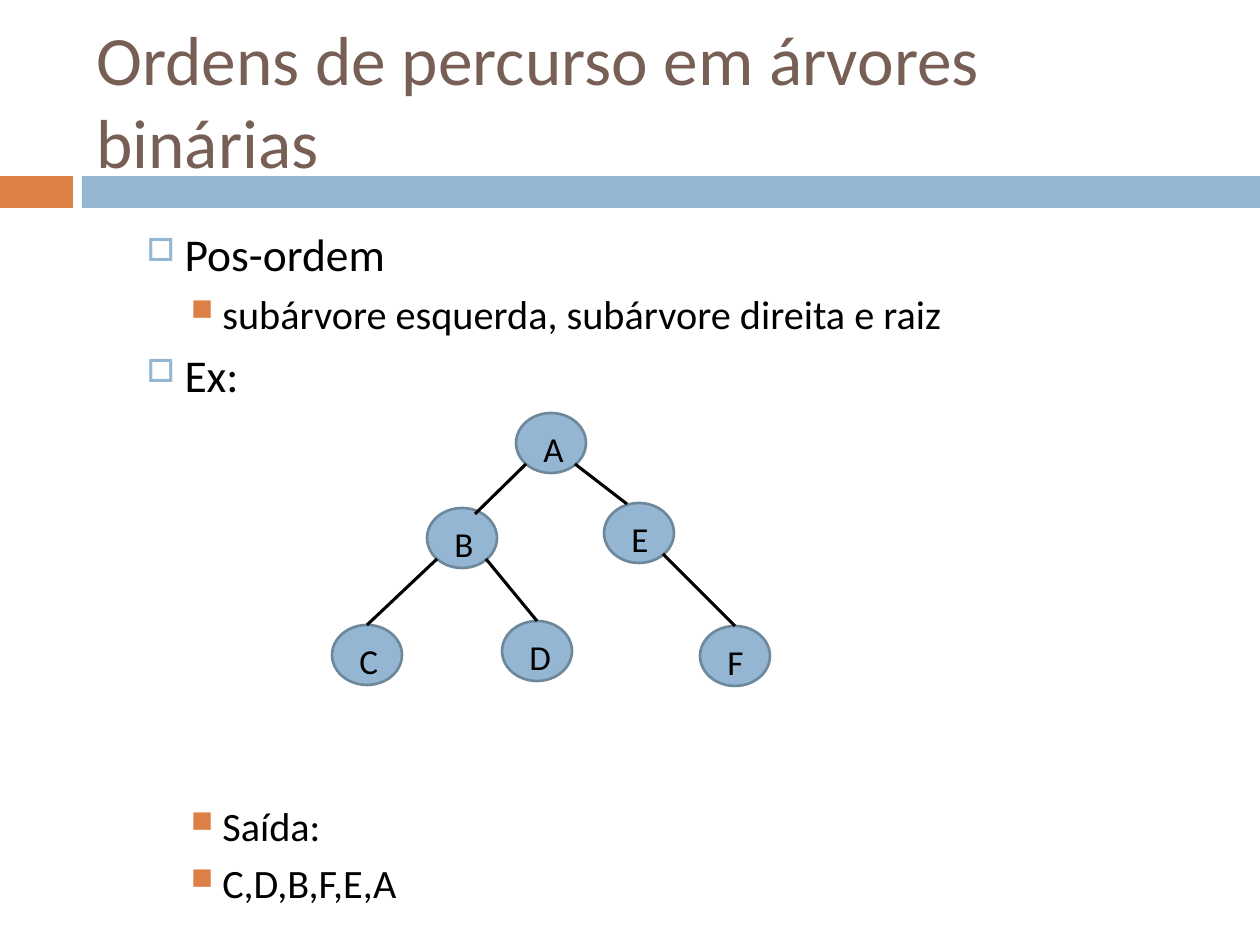
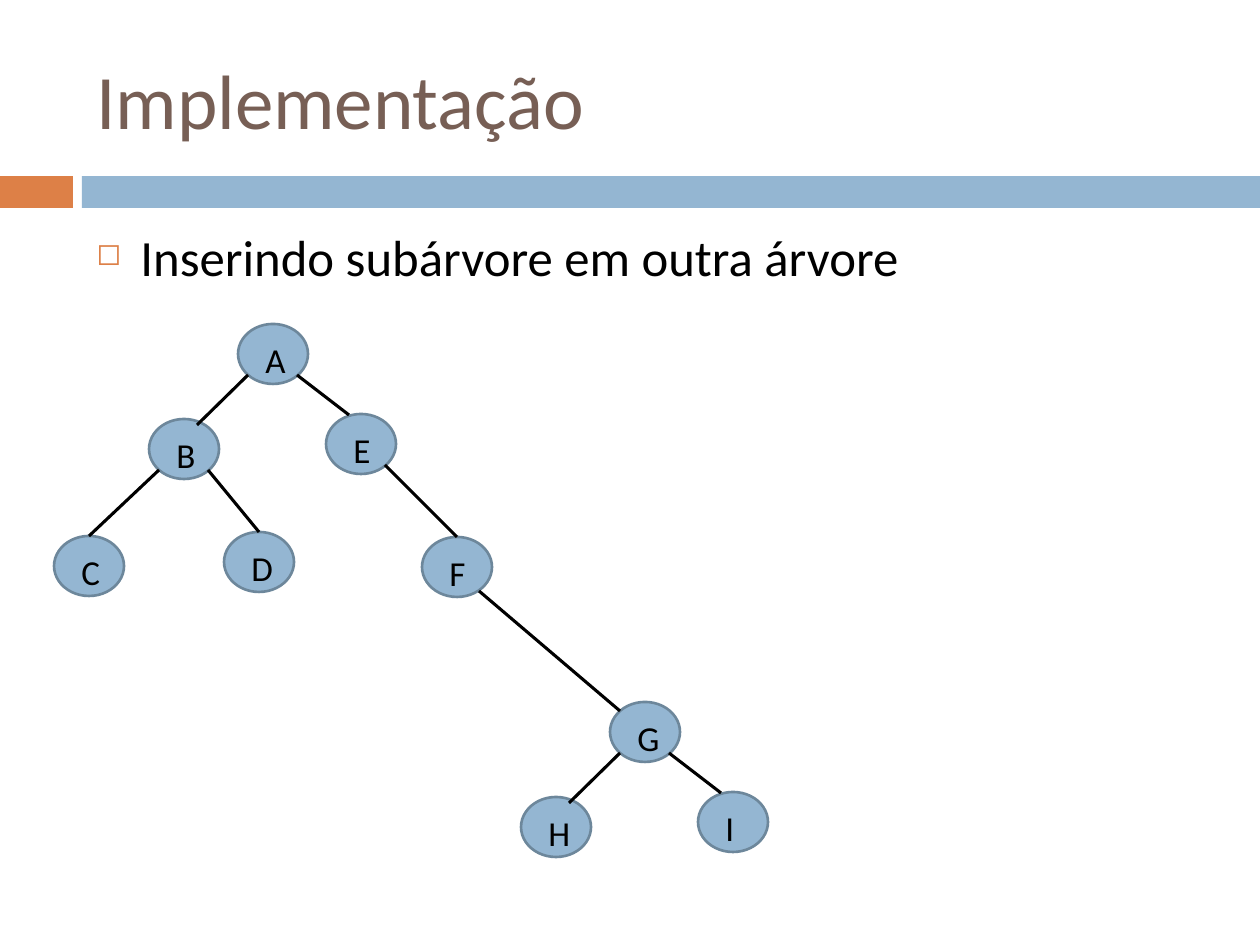
from dataclasses import dataclass
from typing import NamedTuple

from lxml.etree import SubElement
from pptx import Presentation
from pptx.dml.color import RGBColor
from pptx.enum.shapes import MSO_CONNECTOR as Connector, MSO_SHAPE as Shape
from pptx.enum.text import MSO_ANCHOR as Anchor
from pptx.oxml.ns import qn
from pptx.util import Inches, Pt

PIXELS_PER_INCH = 126


def px(length: int) -> int:
    return round(Inches(1) * length / PIXELS_PER_INCH)


@dataclass(frozen=True)
class Theme:
    font: str = "Calibri"
    blue: str = "94B6D2"
    blue_outline: str = "6D879B"
    orange: str = "DD8047"
    title: str = "775F55"
    text: str = "000000"
    long_title_size: float = 39.6
    title_size: float = 44
    lead_size: float = 29
    topic_size: float = 26
    detail_size: float = 23
    node_size: float = 20
    node_line: float = 1.5
    branch_line: float = 1.75


class Point(NamedTuple):
    x: int
    y: int

    def plus(self, other: "Point") -> "Point":
        return Point(self.x + other.x, self.y + other.y)


class Box(NamedTuple):
    left: int
    top: int
    width: int
    height: int

    def to_emu(self) -> list[int]:
        return [px(length) for length in self]


@dataclass(frozen=True)
class BulletStyle:
    symbol: str
    color: str
    percent: int
    margin: float
    hanging: float
    size: float
    space_before: float
    level: int = 0


class Item(NamedTuple):
    text: str
    style: BulletStyle
    extra_space: float = 0


class Branch(NamedTuple):
    parent: str
    child: str
    leave: Point
    arrive: Point


@dataclass(frozen=True)
class Tree:
    nodes: dict[str, Point]
    branches: list[Branch]


THEME = Theme()
LEAD = BulletStyle("◻", THEME.orange, 60, 0.35, 0.35, THEME.lead_size, 7)
TOPIC = BulletStyle("□", THEME.blue, 70, 0.7, 0.3, THEME.topic_size, 5.5, 1)
DETAIL = BulletStyle("■", THEME.orange, 75, 1, 0.25, THEME.detail_size, 5, 2)
TREE_GAP = 223.3

BANDS = [(Box(0, 176, 73, 32), THEME.orange), (Box(82, 176, 1178, 32), THEME.blue)]
TITLE_BOX = Box(84, 31, 1124, 136)

NODE_WIDTH, NODE_HEIGHT = 70, 60
LABEL_OFFSET = Point(15, 8)
LABEL_WIDTH, LABEL_HEIGHT = 44, 55

TOP = Point(35, 0)
TOP_LEFT = Point(10, 9)
LOWER_LEFT = Point(10, 51)
LOWER_RIGHT = Point(59, 51)
LEFT_CHILD_ENTRY = Point(48, 6)
RIGHT_CHILD_ENTRY = Point(23, 1)
LINK_EXIT = Point(57, 54)


def small_tree(root: str, left: str, right: str) -> Tree:
    return Tree(
        {root: Point(0, 0), left: Point(-89, 95), right: Point(88, 90)},
        [
            Branch(root, left, LOWER_LEFT, LEFT_CHILD_ENTRY),
            Branch(root, right, LOWER_RIGHT, RIGHT_CHILD_ENTRY),
        ],
    )


UPPER_TREE = small_tree("A", "B", "E")
MAIN_TREE = Tree(
    UPPER_TREE.nodes | {"C": Point(-184, 212), "D": Point(-14, 208), "F": Point(184, 213)},
    UPPER_TREE.branches
    + [
        Branch("B", "C", LOWER_LEFT, TOP),
        Branch("B", "D", LOWER_RIGHT, TOP),
        Branch("E", "F", LOWER_RIGHT, TOP),
    ],
)
INSERTED_TREE = small_tree("G", "H", "I")


def rgb(color: str) -> RGBColor:
    return RGBColor.from_string(color)


def set_font(paragraph, size: float, color: str) -> None:
    font = paragraph.font
    font.name = THEME.font
    font.size = Pt(size)
    font.color.rgb = rgb(color)


def add_filled(slide, kind: Shape, box: Box, color: str):
    shape = slide.shapes.add_shape(kind, *box.to_emu())
    shape.shadow.inherit = False
    shape.fill.solid()
    shape.fill.fore_color.rgb = rgb(color)
    shape.line.fill.background()
    return shape


def add_text_frame(slide, box: Box):
    frame = slide.shapes.add_textbox(*box.to_emu()).text_frame
    frame.word_wrap = True
    return frame


def add_text(slide, box: Box, text: str, size: float, color: str, anchor: Anchor = Anchor.TOP) -> None:
    frame = add_text_frame(slide, box)
    frame.vertical_anchor = anchor
    frame.text = text
    set_font(frame.paragraphs[0], size, color)


def set_bullet(paragraph, style: BulletStyle) -> None:
    properties = paragraph._p.get_or_add_pPr()
    properties.set("marL", str(Inches(style.margin)))
    properties.set("indent", str(-Inches(style.hanging)))
    color = SubElement(properties, qn("a:buClr"))
    SubElement(color, qn("a:srgbClr"), val=style.color)
    SubElement(properties, qn("a:buSzPct"), val=str(style.percent * 1000))
    SubElement(properties, qn("a:buChar"), char=style.symbol)


def add_items(slide, box: Box, items: list[Item]) -> None:
    frame = add_text_frame(slide, box)
    for index, item in enumerate(items):
        paragraph = frame.add_paragraph() if index else frame.paragraphs[0]
        paragraph.text = item.text
        paragraph.level = item.style.level
        paragraph.space_before = Pt(item.style.space_before + item.extra_space)
        set_bullet(paragraph, item.style)
        set_font(paragraph, item.style.size, THEME.text)


def add_node(slide, label: str, corner: Point) -> None:
    ellipse = add_filled(slide, Shape.OVAL, Box(*corner, NODE_WIDTH, NODE_HEIGHT), THEME.blue)
    ellipse.line.color.rgb = rgb(THEME.blue_outline)
    ellipse.line.width = Pt(THEME.node_line)
    label_box = Box(*corner.plus(LABEL_OFFSET), LABEL_WIDTH, LABEL_HEIGHT)
    add_text(slide, label_box, label, THEME.node_size, THEME.text)


def add_branch(slide, branch: Branch, corners: dict[str, Point]) -> None:
    start = corners[branch.parent].plus(branch.leave)
    end = corners[branch.child].plus(branch.arrive)
    ends = [px(length) for length in (*start, *end)]
    line = slide.shapes.add_connector(Connector.STRAIGHT, *ends)
    line.line.color.rgb = rgb(THEME.text)
    line.line.width = Pt(THEME.branch_line)
    SubElement(line._element.spPr, qn("a:effectLst"))


def add_tree(slide, tree: Tree, origin: Point) -> dict[str, Point]:
    corners = {label: origin.plus(offset) for label, offset in tree.nodes.items()}
    for label, corner in corners.items():
        add_node(slide, label, corner)
    for branch in tree.branches:
        add_branch(slide, branch, corners)
    return corners


def add_titled_slide(presentation, title: str, size: float):
    slide = presentation.slides.add_slide(presentation.slide_layouts[6])
    for box, color in BANDS:
        add_filled(slide, Shape.RECTANGLE, box, color)
    add_text(slide, TITLE_BOX, title, size, THEME.title, Anchor.MIDDLE)
    return slide


def add_traversal_slide(presentation) -> None:
    slide = add_titled_slide(presentation, "Ordens de percurso em árvores binárias", THEME.long_title_size)
    items = [
        Item("Pos-ordem", TOPIC),
        Item("subárvore esquerda, subárvore direita e raiz", DETAIL),
        Item("Ex:", TOPIC),
        Item("Saída:", DETAIL, TREE_GAP),
        Item("C,D,B,F,E,A", DETAIL),
    ]
    add_items(slide, Box(84, 220, 1124, 688), items)
    add_tree(slide, MAIN_TREE, Point(516, 413))


def add_insertion_slide(presentation) -> None:
    slide = add_titled_slide(presentation, "Implementação", THEME.title_size)
    add_items(slide, Box(84, 220, 1124, 620), [Item("Inserindo subárvore em outra árvore", LEAD)])
    corners = add_tree(slide, MAIN_TREE, Point(238, 324))
    corners |= add_tree(slide, INSERTED_TREE, Point(610, 702))
    add_branch(slide, Branch("F", "G", LINK_EXIT, TOP_LEFT), corners)


def main() -> None:
    presentation = Presentation()
    presentation.slide_width = px(1260)
    presentation.slide_height = px(945)
    add_traversal_slide(presentation)
    add_insertion_slide(presentation)
    presentation.save("out.pptx")


if __name__ == "__main__":
    main()
